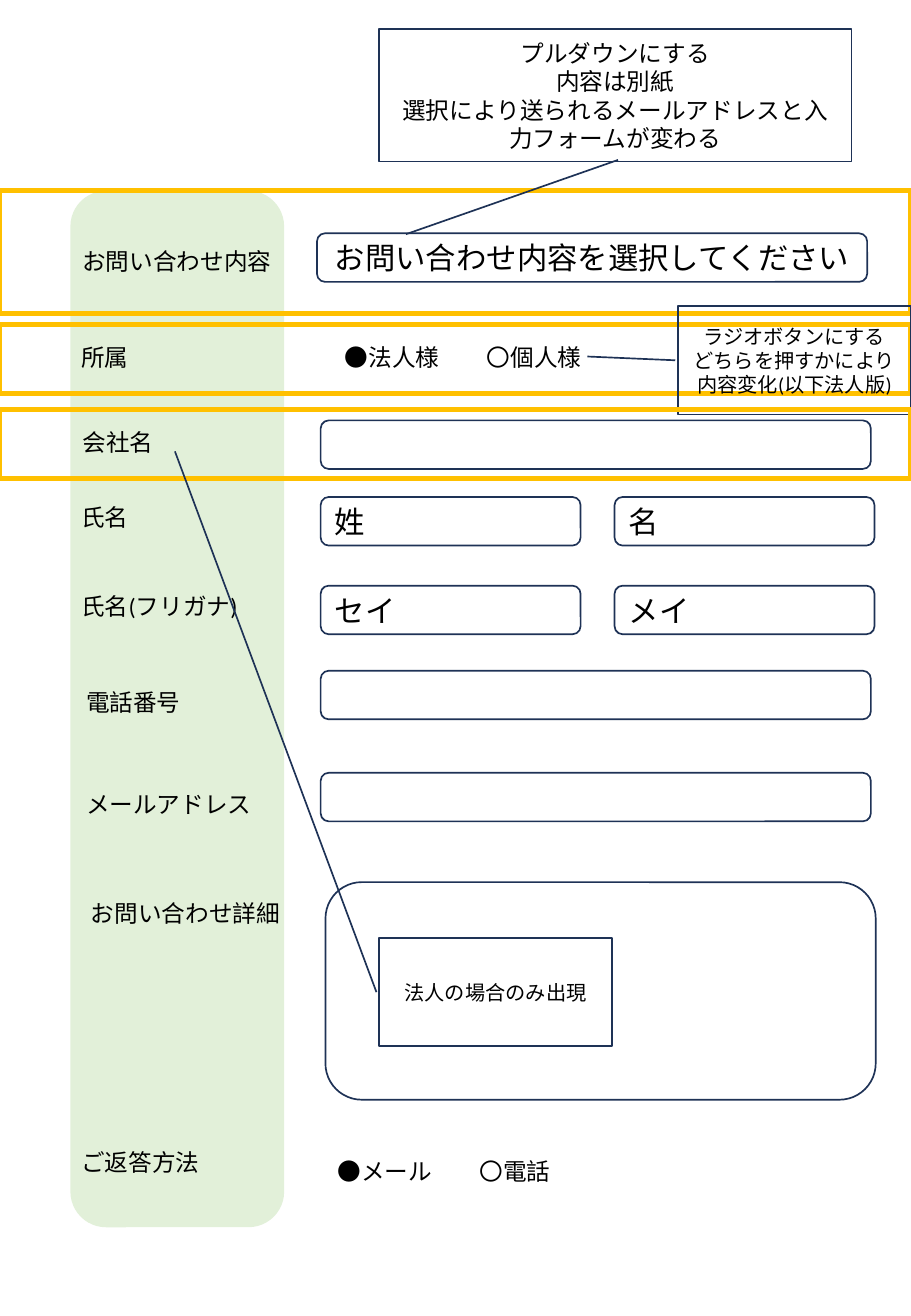
from pptx import Presentation
from pptx.dml.color import RGBColor
from pptx.enum.shapes import MSO_SHAPE
from pptx.enum.text import MSO_ANCHOR, MSO_AUTO_SIZE, PP_ALIGN
from pptx.util import Emu, Pt

PX = 9144  # one px is a hundredth of an inch
WIDE, HIGH = 750, 1083

BLACK = RGBColor(0x00, 0x00, 0x00)
GREEN = RGBColor(0xE2, 0xF0, 0xD9)
NAVY = RGBColor(0x1E, 0x32, 0x56)
GOLD = RGBColor(0xFF, 0xC0, 0x00)

RECT = MSO_SHAPE.RECTANGLE
ROUND = MSO_SHAPE.ROUNDED_RECTANGLE
CALL = MSO_SHAPE.LINE_CALLOUT_1
LEFT, CENTER = PP_ALIGN.LEFT, PP_ALIGN.CENTER
MIDDLE = MSO_ANCHOR.MIDDLE
GROW = MSO_AUTO_SIZE.SHAPE_TO_FIT_TEXT


def put(item, **values):
    for name, value in values.items():
        setattr(item, name, value)


class Form:
    font = "Calibri"

    def __init__(self, slide):
        self.shapes = slide.shapes

    def text(self, shape, words, size, align=LEFT):
        frame = shape.text_frame
        frame.text = words
        for para in frame.paragraphs:
            para.alignment = align
            put(para.font, name=self.font, size=Pt(size))
            para.font.color.rgb = BLACK
        return frame

    def shape(self, kind, box, fill=None, line=None, width=1):
        item = self.shapes.add_shape(kind, *(Emu(n * PX) for n in box))
        item.shadow.inherit = False
        if fill is None:
            item.fill.background()
        else:
            item.fill.solid()
            item.fill.fore_color.rgb = fill
        if line is None:
            item.line.fill.background()
        else:
            item.line.color.rgb = line
            item.line.width = Pt(width)
        return item

    def label(self, words, left, top, width, wrap=False):
        box = (left, top, width, 34)
        item = self.shapes.add_textbox(*(Emu(n * PX) for n in box))
        frame = self.text(item, words, 14)
        put(frame, word_wrap=wrap, auto_size=GROW)

    def field(self, left, top, width=453, height=40, words="", align=LEFT):
        item = self.shape(ROUND, (left, top, width, height), line=NAVY)
        if words:
            frame = self.text(item, words, 18, align)
            put(frame, word_wrap=True, vertical_anchor=MIDDLE)

    def frame(self, top, height):
        self.shape(RECT, (0, top, WIDE, height), line=GOLD, width=3)

    def note(self, words, box, size, tail):
        """Draw a callout; tail gives y, x of its start and of its end."""
        item = self.shape(CALL, box, line=NAVY)
        for index, value in enumerate(tail):
            item.adjustments[index] = value
        frame = self.text(item, words, size, CENTER)
        put(frame, word_wrap=True, vertical_anchor=MIDDLE)


LABELS = [
    ("お問い合わせ内容", 58, 198, 177),
    ("所属", 57, 277, 59),
    ("●法人様　　〇個人様", 274, 277, 217),
    ("会社名", 58, 347, 79),
    ("氏名", 57, 409, 59),
    ("氏名(フリガナ)", 57, 482, 153, True),
    ("電話番号", 61, 561, 99),
    ("メールアドレス", 61, 645, 158),
    ("お問い合わせ詳細", 65, 735, 177),
    ("ご返答方法", 57, 940, 118),
    ("●メール　　〇電話", 268, 947, 197),
]
NAMES = [(409, ("姓", "名")), (482, ("セイ", "メイ"))]


def main():
    deck = Presentation()
    put(deck, slide_width=Emu(WIDE * PX), slide_height=Emu(HIGH * PX))
    form = Form(deck.slides.add_slide(deck.slide_layouts[6]))

    form.shape(ROUND, (58, 157, 176, 853), fill=GREEN)
    for label in LABELS:
        form.label(*label)

    form.field(261, 192, words="お問い合わせ内容を選択してください", align=CENTER)
    for top in (346, 552, 636):
        form.field(264, top)
    for top, pair in NAMES:
        for left, words in zip((264, 506), pair):
            form.field(left, top, width=214, words=words)
    form.field(268, 726, height=179)

    form.frame(157, 101)
    form.note("プルダウンにする\n内容は別紙\n"
              "選択により送られるメールアドレスと入力フォームが変わる",
              (312, 24, 389, 109), 14, (0.987, 0.506, 1.548, 0.057))
    form.frame(267, 57)
    form.note("ラジオボタンにする\nどちらを押すかにより内容変化(以下法人版)",
              (558, 252, 192, 89), 12, (0.5, -0.011, 0.465, -0.388))
    form.frame(337, 57)
    form.note("法人の場合のみ出現",
              (312, 772, 192, 89), 12, (0.5, -0.011, -4.5, -0.875))

    deck.save("out.pptx")


if __name__ == "__main__":
    main()
